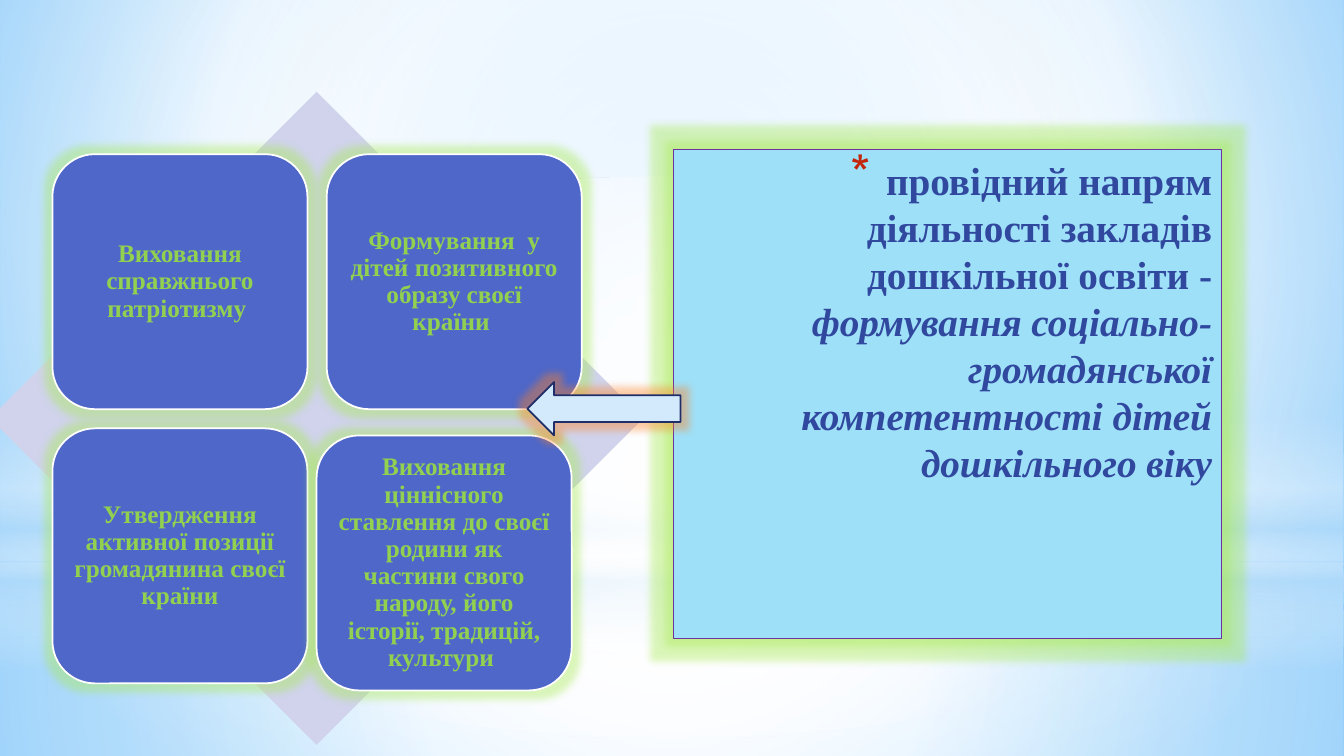
from lxml import etree
from pptx import Presentation
from pptx.dml.color import RGBColor
from pptx.enum.shapes import MSO_SHAPE
from pptx.enum.text import MSO_ANCHOR, PP_ALIGN
from pptx.oxml.ns import qn
from pptx.util import Inches, Pt

RECT, OVAL, DIAMOND = MSO_SHAPE.RECTANGLE, MSO_SHAPE.OVAL, MSO_SHAPE.DIAMOND
ROUNDED, LEFT_ARROW = MSO_SHAPE.ROUNDED_RECTANGLE, MSO_SHAPE.LEFT_ARROW
TOP, MIDDLE = MSO_ANCHOR.TOP, MSO_ANCHOR.MIDDLE
CENTER, RIGHT = PP_ALIGN.CENTER, PP_ALIGN.RIGHT

FONT = "Times New Roman"
WHITE, SKY, GREEN, ORANGE = "FFFFFF", "B4DCFA", "A7EA52", "FF8021"
CARD_SIZE = 2.53
CARDS = [  # left and top within the diamond's box, text
    (0.62, 0.62, "Виховання справжнього патріотизму "),
    (3.34, 0.62, "Формування  у дітей позитивного образу своєї країни "),
    (0.62, 3.34, "Утвердження активної позиції громадянина своєї країни"),
    (3.24, 3.41, "Виховання ціннісного ставлення до своєї родини як частини "
                 "свого народу, його історії, традицій, культури "),
]


def rgb(value):
    return RGBColor.from_string(value)


def add_xml(parent, tag, **attrs):
    return etree.SubElement(parent, qn(tag), {k: str(v) for k, v in attrs.items()})


def add_color(parent, color, alpha):
    add_xml(add_xml(parent, "a:srgbClr", val=color), "a:alpha", val=alpha * 1000)


def set_gradient(props, stops, center=None):
    """Replace the solid fill in props: radial around center, else downwards."""
    solid = props.find(qn("a:solidFill"))
    grad = etree.Element(qn("a:gradFill"), rotWithShape="1")
    stop_list = add_xml(grad, "a:gsLst")
    for position, color, alpha in stops:
        add_color(add_xml(stop_list, "a:gs", pos=position * 1000), color, alpha)
    if center:
        sides = {side: n * 1000 for side, n in zip("ltrb", center)}
        add_xml(add_xml(grad, "a:path", path="circle"), "a:fillToRect", **sides)
    else:
        add_xml(grad, "a:lin", ang=90 * 60000, scaled=0)
    props.replace(solid, grad)


def add_box(s, kind, box, fill, line=None, width=1.25, glow=None):
    sp = s.shapes.add_shape(kind, *map(Inches, box))
    sp.shadow.inherit = False
    sp.fill.solid()
    sp.fill.fore_color.rgb = rgb(fill)
    if line:
        sp.line.color.rgb = rgb(line)
        sp.line.width = Pt(width)
    else:
        sp.line.fill.background()
    if glow:
        effects = sp.element.spPr.find(qn("a:effectLst"))
        add_color(add_xml(effects, "a:glow", rad=Pt(11)), glow, 40)
    return sp


def add_text(sp, text, size, color, align=CENTER, anchor=MIDDLE, inset=0.07,
             spacing=None, italic_text=""):
    tf = sp.text_frame
    tf.word_wrap = True
    tf.vertical_anchor = anchor
    tf.margin_left = tf.margin_right = Inches(inset)
    tf.margin_top = tf.margin_bottom = Inches(min(inset, 0.07))
    p = tf.paragraphs[0]
    p.alignment = align
    p.line_spacing = spacing
    for part, italic in ((text, False), (italic_text, True)):
        if part:
            r = p.add_run()
            r.text = part
            r.font.name, r.font.size = FONT, Pt(size)
            r.font.bold, r.font.italic = True, italic
            r.font.color.rgb = rgb(color)
    return p


def add_backdrop(s, width, height):
    s.background.fill.solid()
    set_gradient(s.element.find(".//" + qn("p:bgPr")),
                 [(0, "9ED5FF", 100), (60, WHITE, 100), (100, "5BB9FF", 100)],
                 (20, 10, 20, 60))
    middle = (50, 50, 50, 50)
    horizon = 5.58
    layers = [
        (RECT, horizon, height - horizon,
         [(0, WHITE, 91), (37, WHITE, 76), (100, SKY, 79)], middle),
        (RECT, 0, horizon,
         [(0, WHITE, 89), (48, WHITE, 62), (100, SKY, 79)], middle),
        (RECT, 4.12, 2.5,
         [(0, WHITE, 0), (29, WHITE, 30), (45, SKY, 40), (55, WHITE, 26),
          (65, SKY, 60), (100, WHITE, 0)], None),
        (OVAL, 1.75, horizon, [(0, WHITE, 100), (56, WHITE, 0)], middle),
    ]
    for kind, top, depth, stops, center in layers:
        sp = add_box(s, kind, (0, top, width, depth), WHITE)
        set_gradient(sp.element.spPr, stops, center)


def add_statement(s, box):
    sp = add_box(s, RECT, box, "9EE0F8", "7030A0", 0.75, GREEN)
    p = add_text(sp, "провідний напрям діяльності закладів дошкільної освіти - ",
                 28, "31489F", RIGHT, TOP, 0.1,
                 italic_text="формування соціально-громадянської "
                             "компетентності дітей дошкільного віку")
    # Hanging red asterisk
    props = p._p.get_or_add_pPr()
    props.set("marL", str(Inches(0.35)))
    props.set("indent", str(-Inches(0.35)))
    add_xml(add_xml(props, "a:buClr"), "a:srgbClr", val="C3260C")
    add_xml(props, "a:buSzPct", val=128000)
    add_xml(props, "a:buChar", char="*")


def add_matrix(s, box):
    left, top = box[:2]
    add_box(s, DIAMOND, box, "D0D3EB")
    for dx, dy, text in CARDS:
        sp = add_box(s, ROUNDED, (left + dx, top + dy, CARD_SIZE, CARD_SIZE),
                     "4E67C8", WHITE, glow=GREEN)
        add_text(sp, text, 18, "92D050", spacing=0.9)


def main():
    prs = Presentation()
    prs.slide_width, prs.slide_height = Inches(13.33), Inches(7.5)
    s = prs.slides.add_slide(prs.slide_layouts[6])
    add_backdrop(s, 13.33, 7.5)
    add_statement(s, (6.68, 1.48, 5.44, 4.85))
    add_matrix(s, (-0.1, 0.91, 6.48, 6.48))
    # Arrow from the statement to the cards
    add_box(s, LEFT_ARROW, (5.23, 3.79, 1.52, 0.53), "D2EAFC", "1F2E69", glow=ORANGE)
    prs.save("out.pptx")


if __name__ == "__main__":
    main()
